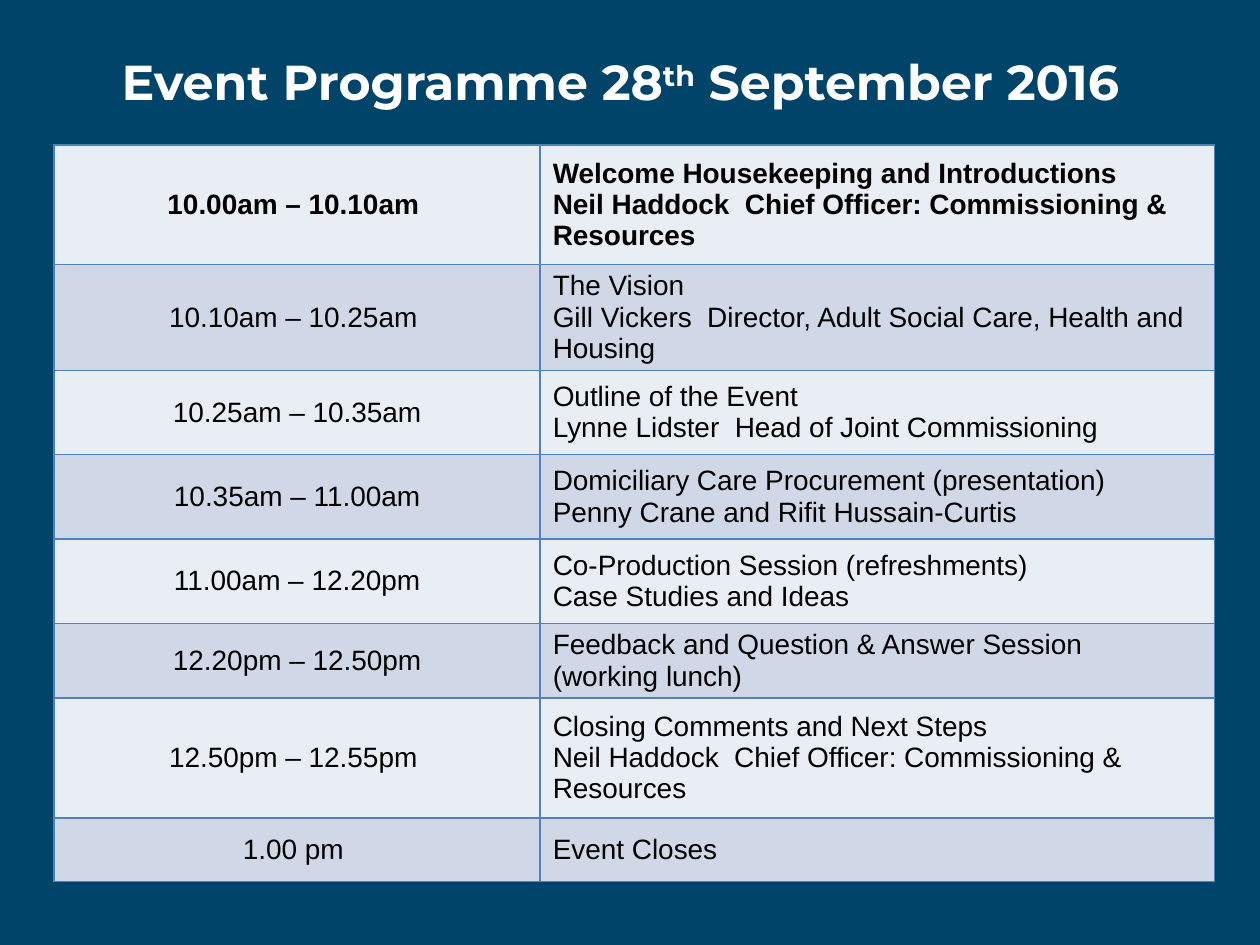
"""Build the event programme slide with its timetable."""
import pptx
import pptx.dml.color
import pptx.enum.text
import pptx.oxml
import pptx.oxml.ns
import pptx.util

Cm = pptx.util.Cm
Pt = pptx.util.Pt
RGBColor = pptx.dml.color.RGBColor
PP_ALIGN = pptx.enum.text.PP_ALIGN
MIDDLE = pptx.enum.text.MSO_ANCHOR.MIDDLE

NAVY = RGBColor(0x00, 0x44, 0x6A)
WHITE = RGBColor(0xFF, 0xFF, 0xFF)
BLACK = RGBColor(0x00, 0x00, 0x00)
BORDER = RGBColor(0x4F, 0x81, 0xBD)
BANDS = (RGBColor(0xE9, 0xED, 0xF4), RGBColor(0xD0, 0xD8, 0xE8))

TITLE = (("Event Programme 28", False), ("th", True), (" September 2016  ", False))
SESSIONS = (
    (2.41, "10.00am – 10.10am ", ("Welcome Housekeeping and Introductions",
                                  "Neil Haddock  Chief Officer: Commissioning & Resources")),
    (1.7, "10.10am – 10.25am ", ("The Vision",
                                 "Gill Vickers  Director, Adult Social Care, Health and Housing")),
    (1.7, "10.25am – 10.35am", ("Outline of the Event",
                                "Lynne Lidster  Head of Joint Commissioning")),
    (1.7, "10.35am – 11.00am", ("Domiciliary Care Procurement (presentation)",
                                "Penny Crane and Rifit Hussain-Curtis")),
    (1.7, "11.00am – 12.20pm", ("Co-Production Session (refreshments)",
                                "Case Studies and Ideas")),
    (1.0, "12.20pm – 12.50pm", ("Feedback and Question & Answer Session  (working lunch)",)),
    (2.41, "12.50pm – 12.55pm ", ("Closing Comments and Next Steps",
                                  "Neil Haddock  Chief Officer: Commissioning & Resources")),
    (1.28, "1.00 pm ", ("Event Closes",)),
)
COLUMN_WIDTHS = (9.8, 13.59)
LEFT, TABLE_TOP = 1.09, 2.92


def add_run(paragraph, text, font, size, color, bold):
    run = paragraph.add_run()
    run.text = text
    run.font.name = font
    run.font.size = Pt(size)
    run.font.bold = bold
    run.font.color.rgb = color
    return run


def add_borders(cell):
    properties = cell._tc.get_or_add_tcPr()
    for position, side in enumerate(("lnL", "lnR", "lnT", "lnB")):
        properties.insert(position, pptx.oxml.parse_xml(
            f'<a:{side} {pptx.oxml.ns.nsdecls("a")} w="{Pt(1)}"><a:solidFill>'
            f'<a:srgbClr val="{BORDER}"/></a:solidFill></a:{side}>'))


def fill_cell(cell, lines, align, band, bold):
    cell.fill.solid()
    cell.fill.fore_color.rgb = band
    cell.vertical_anchor = MIDDLE
    add_borders(cell)
    frame = cell.text_frame
    for index, line in enumerate(lines):
        paragraph = frame.add_paragraph() if index else frame.paragraphs[0]
        paragraph.alignment = align
        add_run(paragraph, line, "Arial", 16, BLACK, bold)


def add_title(slide):
    heading = slide.shapes.title
    heading.left, heading.top = Cm(LEFT), Cm(0.05)
    heading.width, heading.height = Cm(sum(COLUMN_WIDTHS)), Cm(3.18)
    frame = heading.text_frame
    frame.word_wrap = True
    frame.vertical_anchor = MIDDLE
    frame.margin_left = frame.margin_right = Cm(0.3)
    frame.margin_top = frame.margin_bottom = Cm(0.15)
    paragraph = frame.paragraphs[0]
    paragraph.alignment = PP_ALIGN.CENTER
    for text, raised in TITLE:
        run = add_run(paragraph, text, "Montserrat", 28, WHITE, True)
        if raised:
            run._r.get_or_add_rPr().set("baseline", "30000")


def add_timetable(slide):
    timetable = slide.shapes.add_table(
        len(SESSIONS), len(COLUMN_WIDTHS), Cm(LEFT), Cm(TABLE_TOP),
        Cm(sum(COLUMN_WIDTHS)), Cm(sum(session[0] for session in SESSIONS))).table
    for column, width in zip(timetable.columns, COLUMN_WIDTHS):
        column.width = Cm(width)
    for index, (height, time, lines) in enumerate(SESSIONS):
        timetable.rows[index].height = Cm(height)
        band, bold = BANDS[index % 2], index == 0
        fill_cell(timetable.cell(index, 0), (time,), PP_ALIGN.CENTER, band, bold)
        fill_cell(timetable.cell(index, 1), lines, PP_ALIGN.LEFT, band, bold)


def main():
    programme = pptx.Presentation()
    programme.slide_width, programme.slide_height = Cm(25.4), Cm(19.05)
    slide = programme.slides.add_slide(programme.slide_layouts[5])
    slide.background.fill.solid()
    slide.background.fill.fore_color.rgb = NAVY
    add_title(slide)
    add_timetable(slide)
    programme.save("out.pptx")


if __name__ == "__main__":
    main()
